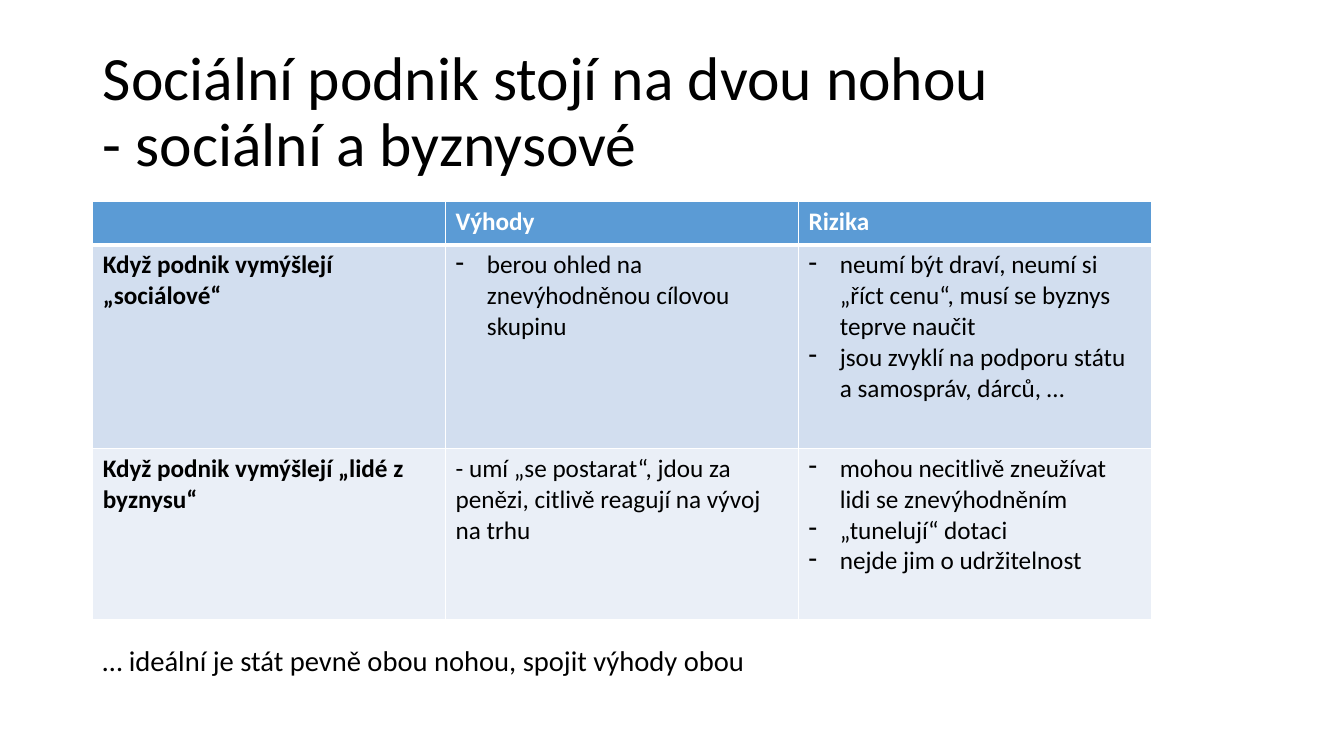
"""Builds a slide comparing the advantages and risks of two kinds of social enterprise founders."""
from lxml.etree import SubElement
from pptx import Presentation
from pptx.dml.color import RGBColor
from pptx.enum.text import MSO_ANCHOR, MSO_AUTO_SIZE, PP_ALIGN
from pptx.oxml.ns import qn
from pptx.util import Inches, Pt

MIDDLE = MSO_ANCHOR.MIDDLE
NO_AUTOFIT = MSO_AUTO_SIZE.NONE
LEFT = PP_ALIGN.LEFT
BLACK = RGBColor(0x00, 0x00, 0x00)
WHITE = RGBColor(0xFF, 0xFF, 0xFF)
HEADER_BLUE = RGBColor(0x5B, 0x9B, 0xD5)
BAND_DARK = RGBColor(0xD2, 0xDE, 0xEF)
BAND_LIGHT = RGBColor(0xEA, 0xEF, 0xF7)
BANDS = (HEADER_BLUE, BAND_DARK, BAND_LIGHT)

MARGIN = 0.92
CONTENT_WIDTH = 11.5
COLUMN_WIDTH = 3.5
ROW_HEIGHTS = (0.43, 2.02, 1.7)
HANGING_INDENT = Inches(0.31)

COMPARISON = [
    ["", "Výhody", "Rizika"],
    [
        "Když podnik vymýšlejí „sociálové“",
        ["berou ohled na znevýhodněnou cílovou skupinu"],
        [
            "neumí být draví, neumí si „říct cenu“, musí se byznys teprve naučit",
            "jsou zvyklí na podporu státu a samospráv, dárců, …",
        ],
    ],
    [
        "Když podnik vymýšlejí „lidé z byznysu“",
        "- umí „se postarat“, jdou za penězi, citlivě reagují na vývoj na trhu",
        [
            "mohou necitlivě zneužívat lidi se znevýhodněním",
            "„tunelují“ dotaci",
            "nejde jim o udržitelnost",
        ],
    ],
]


class SlideBuilder:
    def __init__(self, slide, font="Calibri"):
        self.slide = slide
        self.font = font

    def format_runs(self, paragraph, size, color=BLACK, bold=False):
        for run in paragraph.runs:
            run.font.name = self.font
            run.font.size = Pt(size)
            run.font.color.rgb = color
            run.font.bold = bold

    def title(self, lines, top, height):
        title = self.slide.shapes.title
        title.left, title.top = Inches(MARGIN), Inches(top)
        title.width, title.height = Inches(CONTENT_WIDTH), Inches(height)
        frame = title.text_frame
        frame.auto_size = NO_AUTOFIT
        frame.vertical_anchor = MIDDLE
        heading = frame.paragraphs[0]
        heading.text = "\v".join(lines)
        heading.alignment = LEFT
        heading.line_spacing = 0.9
        self.format_runs(heading, 44)

    def text(self, wording, top, height, size):
        box = self.slide.shapes.add_textbox(
            Inches(MARGIN), Inches(top), Inches(CONTENT_WIDTH), Inches(height))
        frame = box.text_frame
        frame.word_wrap = True
        frame.vertical_anchor = MIDDLE
        frame.text = wording
        self.format_runs(frame.paragraphs[0], size)

    def border(self, cell, side, width):
        line = SubElement(cell._tc.get_or_add_tcPr(), qn(f"a:ln{side}"), w=str(Pt(width)))
        fill = SubElement(line, qn("a:solidFill"))
        SubElement(fill, qn("a:srgbClr"), val=str(WHITE))

    def dash(self, paragraph):
        properties = paragraph._p.get_or_add_pPr()
        properties.set("marL", str(HANGING_INDENT))
        properties.set("indent", str(-HANGING_INDENT))
        SubElement(properties, qn("a:buFontTx"))
        SubElement(properties, qn("a:buChar"), char="-")

    def cell(self, cell, content, row, column):
        header = row == 0
        self.border(cell, "L", 1)
        self.border(cell, "R", 1)
        self.border(cell, "T", 3 if row == 1 else 1)
        self.border(cell, "B", 3 if header else 1)
        cell.fill.solid()
        cell.fill.fore_color.rgb = BANDS[row]
        dashed = isinstance(content, list)
        cell.text_frame.text = "\n".join(content) if dashed else content
        for paragraph in cell.text_frame.paragraphs:
            if dashed:
                self.dash(paragraph)
            self.format_runs(paragraph, 18, WHITE if header else BLACK, header or column == 0)

    def table(self, rows, top):
        columns = len(rows[0])
        table = self.slide.shapes.add_table(
            len(rows), columns, Inches(MARGIN), Inches(top),
            Inches(COLUMN_WIDTH * columns), Inches(sum(ROW_HEIGHTS))).table
        for column in table.columns:
            column.width = Inches(COLUMN_WIDTH)
        for r, contents in enumerate(rows):
            table.rows[r].height = Inches(ROW_HEIGHTS[r])
            for c, content in enumerate(contents):
                self.cell(table.cell(r, c), content, r, c)


def main():
    presentation = Presentation()
    presentation.slide_width = Inches(13.33)
    presentation.slide_height = Inches(7.5)
    title_only = presentation.slide_layouts[5]
    builder = SlideBuilder(presentation.slides.add_slide(title_only))
    builder.title(["Sociální podnik stojí na dvou nohou", "- sociální a byznysové"], 0.4, 1.45)
    builder.text("… ideální je stát pevně obou nohou, spojit výhody obou", 6.3, 0.5, 20.4)
    builder.table(COMPARISON, 2)
    presentation.save("out.pptx")


if __name__ == "__main__":
    main()
